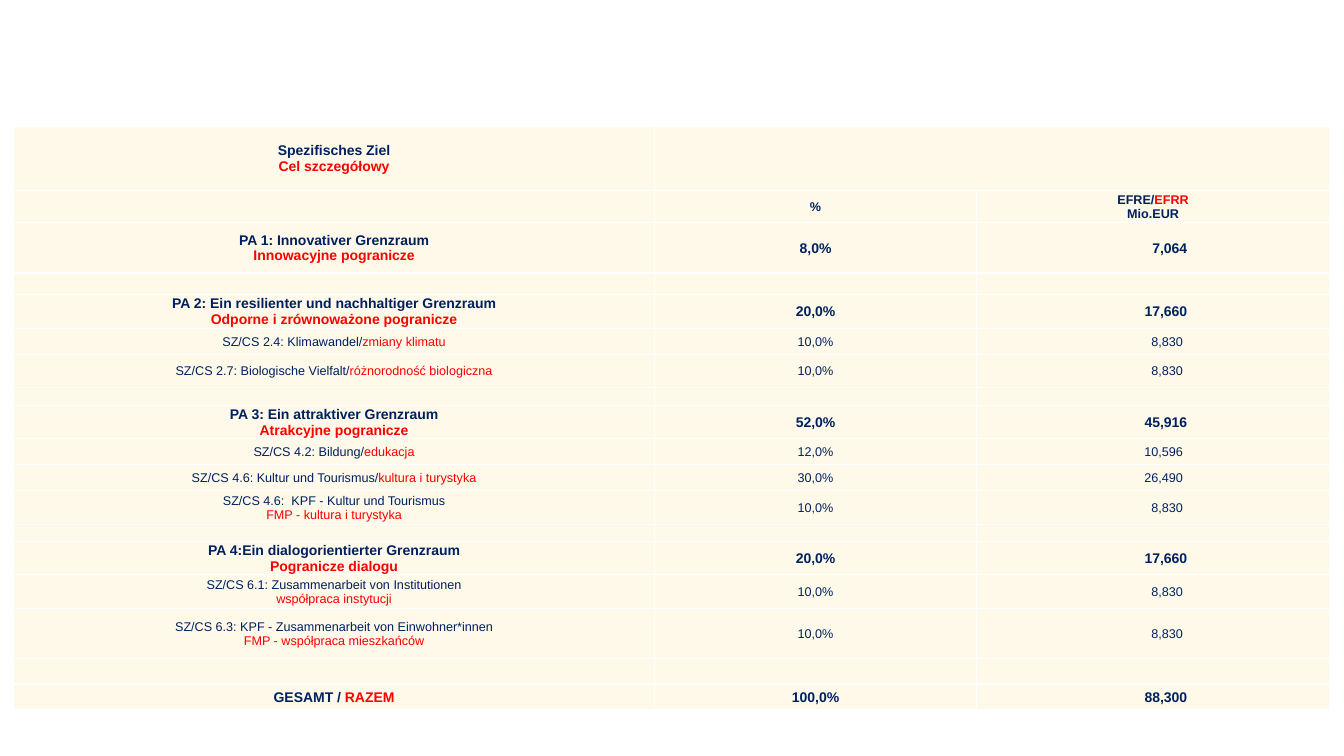
from lxml.etree import SubElement
from pptx import Presentation
from pptx.dml.color import RGBColor
from pptx.enum.text import MSO_ANCHOR as Anchor, PP_ALIGN as Align
from pptx.oxml.ns import qn
from pptx.util import Pt

NAVY = RGBColor(0x00, 0x20, 0x60)
RED = RGBColor(0xFF, 0x00, 0x00)
CREAM = RGBColor(0xFE, 0xF9, 0xE9)
WHITE = RGBColor(0xFF, 0xFF, 0xFF)

# Row kinds: text size and weight
STYLES = {"head": (10, True), "unit": (9, True), "axis": (10, True),
          "goal": (9, False), "gap": (8, False)}

# Height, kind, cells; text after "|" is Polish and red
ROWS = [
    (46, "head", ("Spezifisches Ziel\n|Cel szczegółowy", "", "")),
    (23, "unit", ("", "%", "EFRE/|EFRR\nMio.EUR")),
    (36, "axis", ("PA 1: Innovativer Grenzraum\n|Innowacyjne pogranicze", "8,0%", "7,064")),
    (15.5, "gap", ("", "", "")),
    (24, "axis", ("PA 2: Ein resilienter und nachhaltiger Grenzraum\n"
                  "|Odporne i zrównoważone pogranicze", "20,0%", "17,660")),
    (18.6, "goal", ("SZ/CS 2.4: Klimawandel/|zmiany klimatu", "10,0%", "8,830")),
    (24, "goal", ("SZ/CS 2.7: Biologische Vielfalt/|różnorodność biologiczna",
                  "10,0%", "8,830")),
    (12.5, "gap", ("", "", "")),
    (24, "axis", ("PA 3: Ein attraktiver Grenzraum\n|Atrakcyjne pogranicze",
                  "52,0%", "45,916")),
    (18.6, "goal", ("SZ/CS 4.2: Bildung/|edukacja", "12,0%", "10,596")),
    (18.6, "goal", ("SZ/CS 4.6: Kultur und Tourismus/|kultura i turystyka",
                    "30,0%", "26,490")),
    (24, "goal", ("SZ/CS 4.6:  KPF - Kultur und Tourismus\n|FMP - kultura i turystyka",
                  "10,0%", "8,830")),
    (12, "gap", ("", "", "")),
    (24, "axis", ("PA 4:Ein dialogorientierter Grenzraum\n|Pogranicze dialogu",
                  "20,0%", "17,660")),
    (24, "goal", ("SZ/CS 6.1: Zusammenarbeit von Institutionen\n|współpraca instytucji",
                  "10,0%", "8,830")),
    (36, "goal", ("SZ/CS 6.3: KPF - Zusammenarbeit von Einwohner*innen\n"
                  "|FMP - współpraca mieszkańców", "10,0%", "8,830")),
    (18, "gap", ("", "", "")),
    (18.6, "axis", ("GESAMT /| RAZEM", "100,0%", "88,300")),
]
WIDTHS = (458.6, 229.7, 252.7)
LEFT, TOP = 9.4, 90
INSET = 0.7
SUMS = {"axis": 102, "goal": 105}  # right inset of the amounts


def add_edges(cell):
    props = cell._tc.get_or_add_tcPr()
    for side in ("lnL", "lnR", "lnT", "lnB"):
        line = SubElement(props, qn("a:" + side), w=str(Pt(1)))
        fill = SubElement(line, qn("a:solidFill"))
        SubElement(fill, qn("a:srgbClr"), val=str(WHITE))


def write(cell, text, size, bold, align):
    frame = cell.text_frame
    for num, line in enumerate(text.split("\n")):
        para = frame.add_paragraph() if num else frame.paragraphs[0]
        para.alignment = align
        german, _, polish = line.partition("|")
        for part, color in ((german, NAVY), (polish, RED)):
            if part:
                run = para.add_run()
                run.text = part
                font = run.font
                font.name, font.size, font.bold = "Arial", Pt(size), bold
                font.color.rgb = color
        if not line:
            # Small empty lines keep the gap rows low
            SubElement(para._p, qn("a:endParaRPr"), sz="800")


# Slide
prs = Presentation()
prs.slide_width, prs.slide_height = Pt(960.5), Pt(540)
slide = prs.slides.add_slide(prs.slide_layouts[6])

# Table frame
high = sum(row[0] for row in ROWS)
table = slide.shapes.add_table(len(ROWS), len(WIDTHS), Pt(LEFT), Pt(TOP),
                               Pt(sum(WIDTHS)), Pt(high)).table
table.first_row = table.horz_banding = False
for col, width in zip(table.columns, WIDTHS):
    col.width = Pt(width)

# Budget rows
for r, (height, kind, texts) in enumerate(ROWS):
    table.rows[r].height = Pt(height)
    size, bold = STYLES[kind]
    for c, text in enumerate(texts):
        cell = table.cell(r, c)
        amount = c == 2 and kind in SUMS
        cell.margin_left = cell.margin_top = Pt(INSET)
        cell.margin_right = Pt(SUMS[kind] if amount else INSET)
        cell.margin_bottom = 0
        cell.vertical_anchor = Anchor.MIDDLE
        add_edges(cell)
        cell.fill.solid()
        cell.fill.fore_color.rgb = CREAM
        write(cell, text, size, bold, Align.RIGHT if amount else Align.CENTER)
table.cell(0, 1).merge(table.cell(0, 2))

prs.save("out.pptx")
